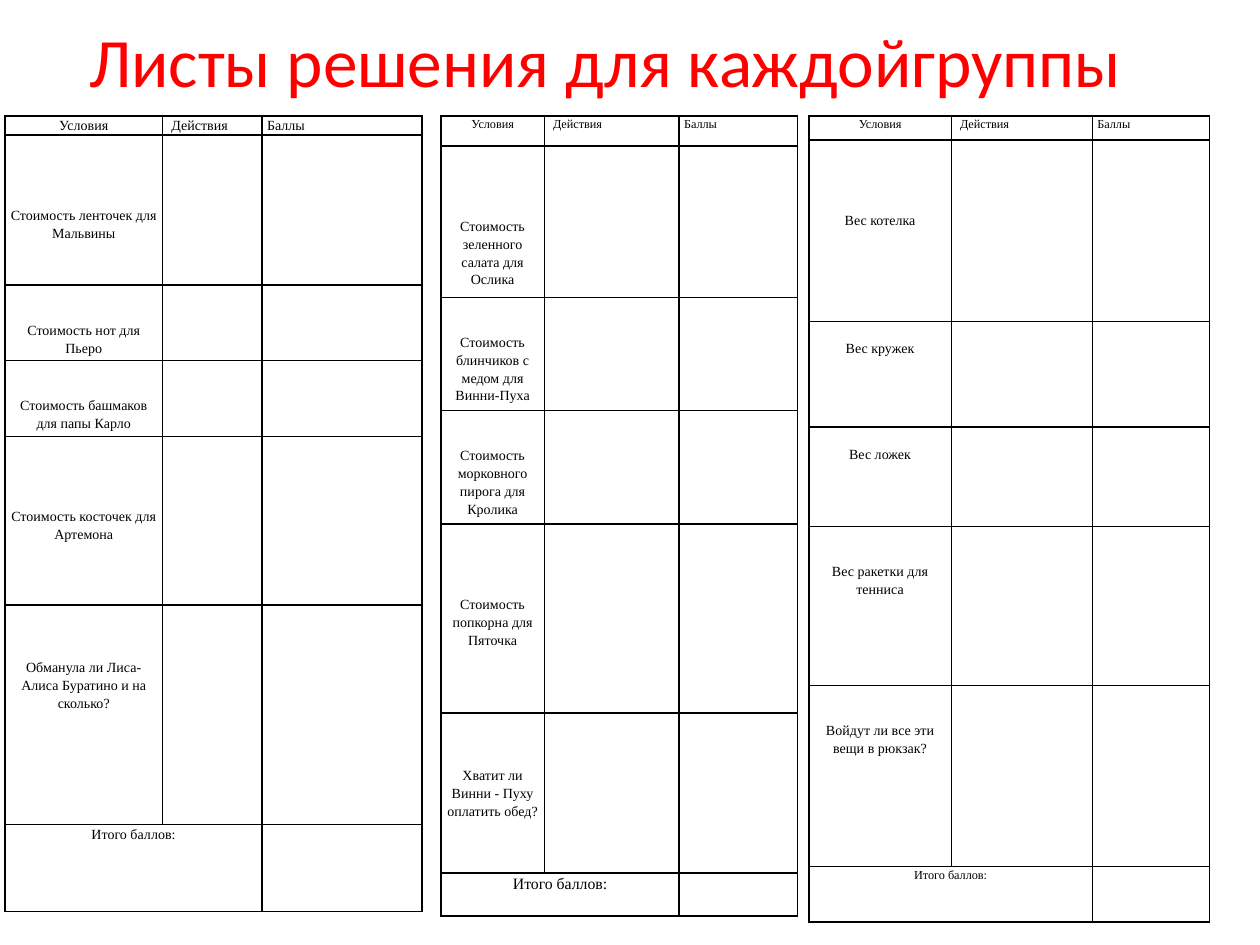
from lxml import etree
from pptx import Presentation
from pptx.dml.color import RGBColor
from pptx.enum.text import MSO_ANCHOR, PP_ALIGN
from pptx.oxml.ns import qn
from pptx.util import Inches, Pt

CENTER, JUSTIFY = PP_ALIGN.CENTER, PP_ALIGN.JUSTIFY
MIDDLE = MSO_ANCHOR.MIDDLE
COLORS = {"title": "FF0000", "text": "000000", "border": "000000"}
TITLE_FONT, TABLE_FONT = "Calibri", "Times New Roman"

TITLE = "Листы решения для каждойгруппы"
HEADERS = ["Условия", "Действия", "Баллы"]
TOTAL = "Итого баллов:"
TABLE_TOP = 0.92
SIDE_MARGIN = 0.04
ACTION_INDENT = 0.06
LINE_HEIGHT = 0.14  # one line of 8 pt text
TASK_SIZE = 8

# Each task: wording, lines of space above it, row height
SHEETS = [
    {"left": 0.04, "columns": [1.25, 0.79, 1.27],
     "header_height": 0.14, "header_size": 8,
     "total_height": 0.69, "total_size": 8,
     "tasks": [
         ("Стоимость ленточек для Мальвины", 4, 1.19),
         ("Стоимость нот для Пьеро", 2, 0.6),
         ("Стоимость башмаков для папы Карло", 2, 0.6),
         ("Стоимость косточек для Артемона", 4, 1.34),
         ("Обманула ли Лиса- Алиса Буратино и на сколько?", 3, 1.74)]},
    {"left": 3.5, "columns": [0.82, 1.07, 0.94],
     "header_height": 0.24, "header_size": 7,
     "total_height": 0.34, "total_size": 9,
     "tasks": [
         ("Стоимость зеленного салата для Ослика", 4, 1.2),
         ("Стоимость блинчиков с медом для Винни-Пуха", 2, 0.9),
         ("Стоимость морковного пирога для Кролика", 2, 0.9),
         ("Стоимость попкорна для Пяточка", 4, 1.5),
         ("Хватит ли Винни - Пуху оплатить обед?", 3, 1.27)]},
    {"left": 6.42, "columns": [1.13, 1.12, 0.93],
     "header_height": 0.19, "header_size": 7,
     "total_height": 0.44, "total_size": 7,
     "tasks": [
         ("Вес котелка", 4, 1.44),
         ("Вес кружек", 1, 0.84),
         ("Вес ложек", 1, 0.79),
         ("Вес ракетки для тенниса", 2, 1.26),
         ("Войдут ли все эти вещи в рюкзак?", 2, 1.44)]},
]


def write(frame, text, *, size, font=TABLE_FONT, color="text",
          align=CENTER, spacing=1.15):
    para = frame.paragraphs[0]
    para.alignment = align
    para.line_spacing = spacing
    span = para.add_run()
    span.text = text
    span.font.name = font
    span.font.size = Pt(size)
    span.font.color.rgb = RGBColor.from_string(COLORS[color])


def format_cell(cell):
    cell.margin_left = cell.margin_right = Inches(SIDE_MARGIN)
    cell.margin_top = cell.margin_bottom = 0
    properties = cell._tc.get_or_add_tcPr()
    for side in ("a:lnL", "a:lnR", "a:lnT", "a:lnB"):
        line = etree.SubElement(properties, qn(side), w=str(Pt(1)))
        fill = etree.SubElement(line, qn("a:solidFill"))
        etree.SubElement(fill, qn("a:srgbClr"), val=COLORS["border"])
    cell.fill.background()


def add_sheet(page, sheet):
    tasks, columns = sheet["tasks"], sheet["columns"]
    heights = [sheet["header_height"], *(task[2] for task in tasks),
               sheet["total_height"]]
    table = page.shapes.add_table(
        len(heights), len(columns), Inches(sheet["left"]), Inches(TABLE_TOP),
        Inches(sum(columns)), Inches(sum(heights))).table
    table.first_row = table.horz_banding = False
    for column, width in zip(table.columns, columns):
        column.width = Inches(width)
    for row, height in zip(table.rows, heights):
        row.height = Inches(height)
    for cell in table.iter_cells():
        format_cell(cell)

    # Header row
    for index, header in enumerate(HEADERS):
        write(table.cell(0, index).text_frame, header,
              size=sheet["header_size"], align=JUSTIFY if index else CENTER)
    table.cell(0, 1).margin_left = Inches(SIDE_MARGIN + ACTION_INDENT / 2)

    # Task rows
    for index, (text, lines_above, _) in enumerate(tasks, start=1):
        cell = table.cell(index, 0)
        cell.margin_top = Inches(lines_above * LINE_HEIGHT)
        write(cell.text_frame, text, size=TASK_SIZE)

    # Total row
    last = len(heights) - 1
    total = table.cell(last, 0)
    total.merge(table.cell(last, 1))
    write(total.text_frame, TOTAL, size=sheet["total_size"])


def main():
    deck = Presentation()
    deck.slide_width, deck.slide_height = Inches(10), Inches(7.5)
    page = deck.slides.add_slide(deck.slide_layouts[6])

    # Title
    box = page.shapes.add_textbox(Inches(0.43), Inches(0.13),
                                  Inches(8.75), Inches(0.69))
    box.text_frame.word_wrap = True
    box.text_frame.vertical_anchor = MIDDLE
    write(box.text_frame, TITLE, size=39.6, font=TITLE_FONT, color="title",
          spacing=1.0)

    # Answer sheets
    for sheet in SHEETS:
        add_sheet(page, sheet)

    deck.save("out.pptx")


if __name__ == "__main__":
    main()
